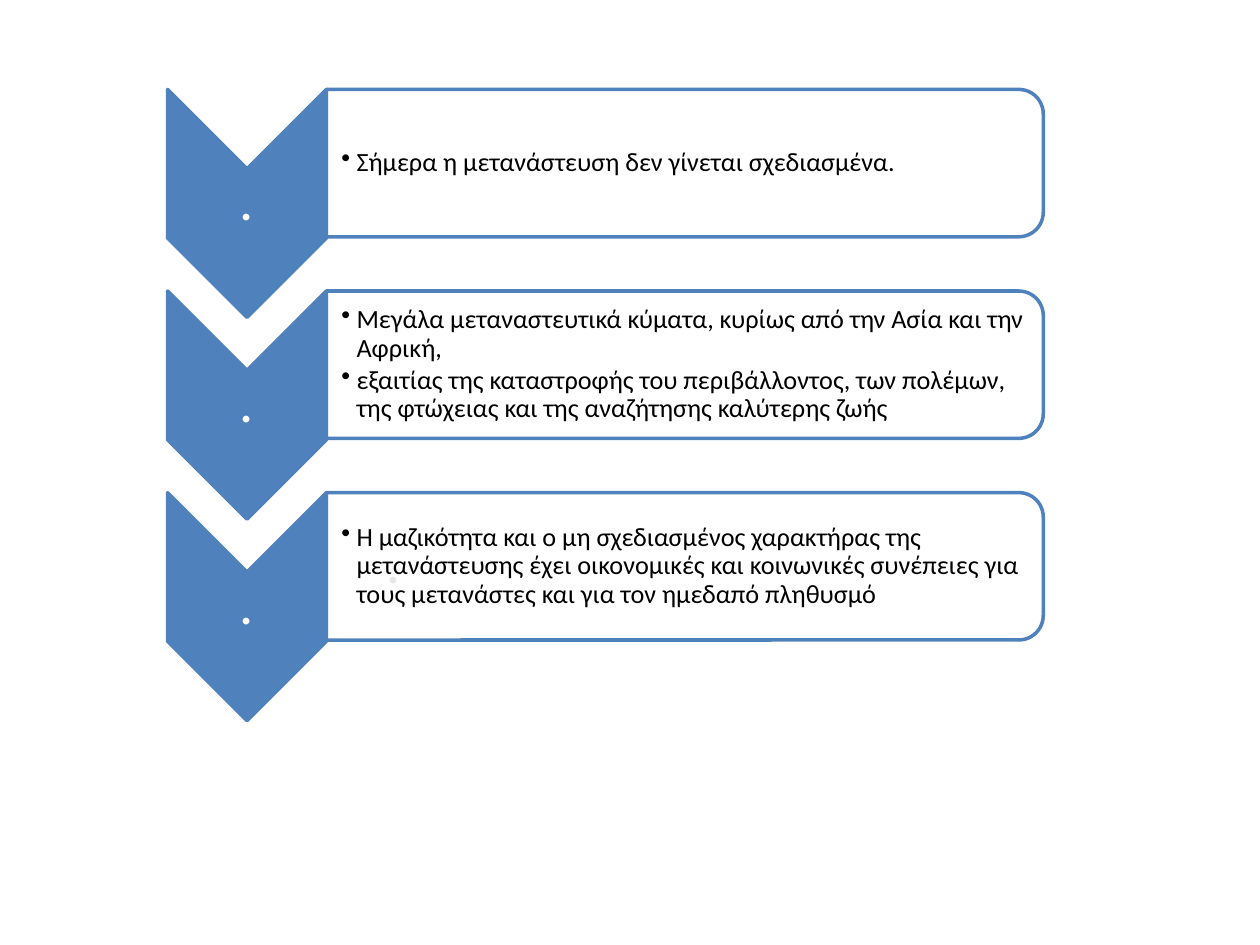
from lxml import etree
from pptx import Presentation
from pptx.dml.color import RGBColor
from pptx.enum.shapes import MSO_SHAPE
from pptx.enum.text import MSO_ANCHOR, PP_ALIGN
from pptx.oxml.ns import qn
from pptx.util import Inches, Pt

CHEVRON, BAR = MSO_SHAPE.CHEVRON, MSO_SHAPE.ROUND_2_SAME_RECTANGLE
MIDDLE, CENTER, LEFT = MSO_ANCHOR.MIDDLE, PP_ALIGN.CENTER, PP_ALIGN.LEFT
BLUE, WHITE, BLACK = "4F81BD", "FFFFFF", "000000"
FONT = "Calibri"

MARK = "."
ROWS = [
    ["Σήμερα η μετανάστευση δεν γίνεται σχεδιασμένα."],
    ["Μεγάλα μεταναστευτικά κύματα, κυρίως από την Ασία και την Αφρική,",
     "εξαιτίας της καταστροφής του περιβάλλοντος, των πολέμων, "
     "της φτώχειας και της αναζήτησης καλύτερης ζωής"],
    ["Η μαζικότητα και ο μη σχεδιασμένος χαρακτήρας της μετανάστευσης "
     "έχει οικονομικές και κοινωνικές συνέπειες για τους μετανάστες "
     "και για τον ημεδαπό πληθυσμό"],
]
TOP, STEP = 0.71, 1.6
LEFT_EDGE, CHEVRON_W, CHEVRON_H = 1.33, 1.26, 1.81
BAR_W, BAR_H = 5.69, 1.17
TEXT_W, TEXT_H = 5.63, 1.06
MARK_DROP, MARK_H = 0.63, 0.54

MARK_STYLE = {"size": 32, "color": WHITE, "align": CENTER, "after": 11,
              "margins": (0.02, 0.02, 0.02, 0.02), "indent": 0}
ITEM_STYLE = {"size": 15, "color": BLACK, "align": LEFT, "after": 2.25,
              "margins": (0.12, 0.01, 0.01, 0.01), "indent": 0.12}


def rgb(color):
    return RGBColor.from_string(color)


def set_font(r, size, color):
    for name, value in {"name": FONT, "size": Pt(size)}.items():
        setattr(r.font, name, value)
    r.font.color.rgb = rgb(color)


def set_bullet(p, indent, char=None):
    pPr = p._p.get_or_add_pPr()
    pPr.set("marL", str(Inches(indent)))
    pPr.set("indent", str(-Inches(indent)))
    if char:
        etree.SubElement(pPr, qn("a:buChar")).set("char", char)
    else:
        etree.SubElement(pPr, qn("a:buNone"))


def add_turned(s, kind, x, y, w, h, fill, alpha=None):
    sp = s.shapes.add_shape(kind, Inches(x + (w - h) / 2), Inches(y + (h - w) / 2),
                            Inches(h), Inches(w))
    sp.rotation = 90
    sp.shadow.inherit = False
    sp.fill.solid()
    sp.fill.fore_color.rgb = rgb(fill)
    sp.line.color.rgb = rgb(BLUE)
    sp.line.width = Pt(2)
    if alpha:
        color = sp._element.spPr.find(qn("a:solidFill"))[0]
        etree.SubElement(color, qn("a:alpha")).set("val", str(alpha * 1000))


def add_text(s, x, y, w, h, lines, style):
    tf = s.shapes.add_textbox(Inches(x), Inches(y), Inches(w), Inches(h)).text_frame
    tf.word_wrap = True
    tf.vertical_anchor = MIDDLE
    for side, value in zip(("left", "top", "right", "bottom"), style["margins"]):
        setattr(tf, f"margin_{side}", Inches(value))
    for i, line in enumerate(lines):
        p = tf.add_paragraph() if i else tf.paragraphs[0]
        formats = {"alignment": style["align"], "line_spacing": 0.9,
                   "space_after": Pt(style["after"])}
        for name, value in formats.items():
            setattr(p, name, value)
        if style["indent"]:
            set_bullet(p, style["indent"], "•")
        r = p.add_run()
        r.text = line
        set_font(r, style["size"], style["color"])


def main():
    prs = Presentation()
    prs.slide_width, prs.slide_height = Inches(10), Inches(7.5)
    s = prs.slides.add_slide(prs.slide_layouts[1])
    title = s.shapes.title._element
    title.getparent().remove(title)

    body = s.placeholders[1]
    box = {"left": 2.97, "top": 4.14, "width": 6.53, "height": 2.56}
    for name, value in box.items():
        setattr(body, name, Inches(value))
    p = body.text_frame.paragraphs[0]
    set_bullet(p, 0.38)
    r = p.add_run()
    r.text = MARK
    set_font(r, 32, BLACK)

    bar_x = LEFT_EDGE + CHEVRON_W
    for i, lines in enumerate(ROWS):
        y = TOP + i * STEP
        add_turned(s, CHEVRON, LEFT_EDGE, y, CHEVRON_W, CHEVRON_H, BLUE)
        add_text(s, LEFT_EDGE, y + MARK_DROP, CHEVRON_W, MARK_H, [MARK], MARK_STYLE)
        add_turned(s, BAR, bar_x, y, BAR_W, BAR_H, WHITE, 90)
        add_text(s, bar_x, y + (BAR_H - TEXT_H) / 2, TEXT_W, TEXT_H, lines, ITEM_STYLE)

    prs.save("out.pptx")


if __name__ == "__main__":
    main()
